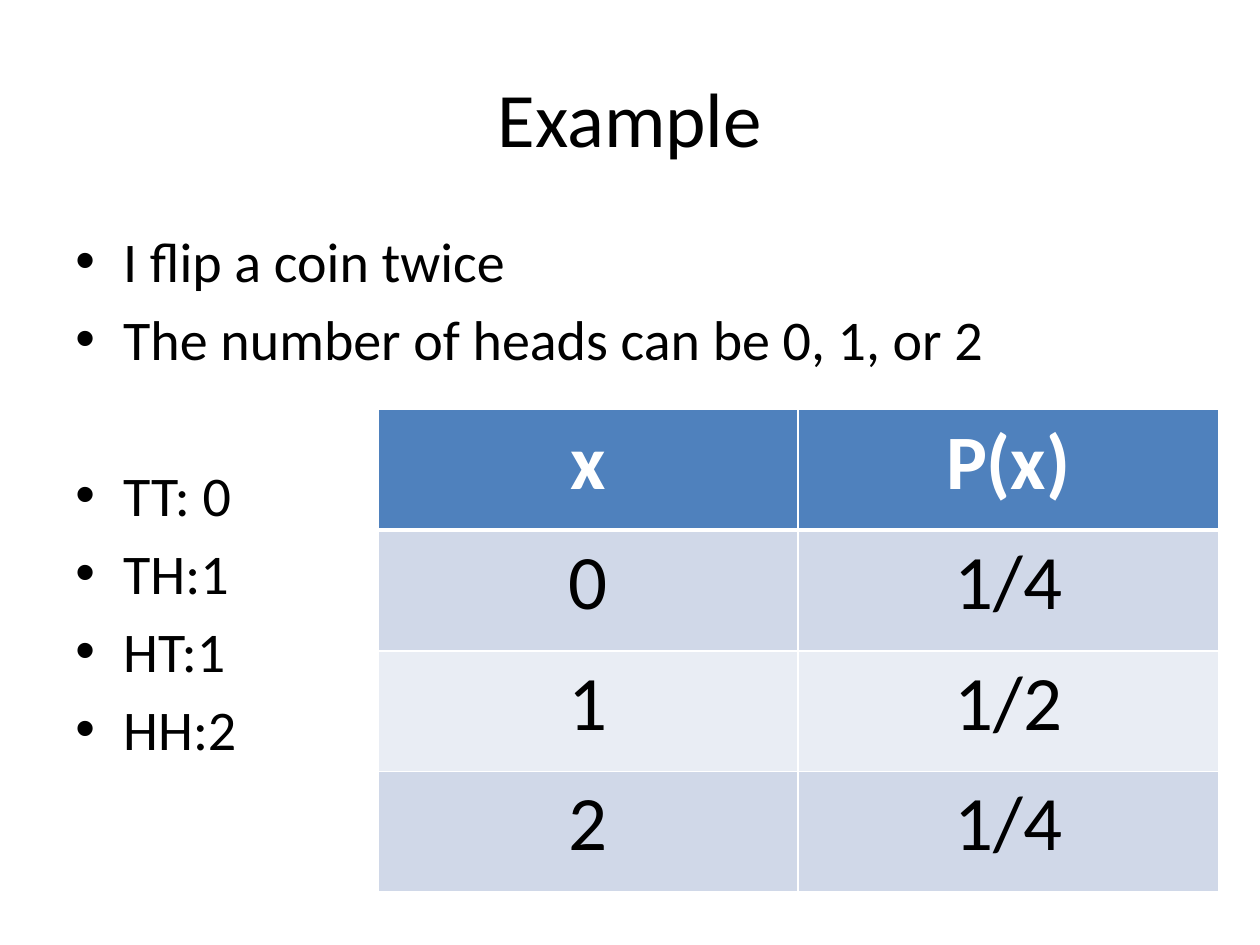
from lxml.etree import SubElement
from pptx import Presentation
from pptx.dml.color import RGBColor
from pptx.enum.text import MSO_ANCHOR, PP_ALIGN
from pptx.oxml.ns import qn
from pptx.util import Inches, Pt

BLACK, WHITE, BLUE = "000000", "FFFFFF", "4F81BD"
BANDS = ("D0D8E8", "E9EDF4")


def rgb(value):
    return RGBColor.from_string(value)


def write(paragraph, text, size=32, color=BLACK, bold=False,
          align=PP_ALIGN.LEFT, before=0, bullet=None):
    paragraph.alignment = align
    paragraph.space_before = Pt(before)
    run = paragraph.add_run()
    run.text = text
    font = run.font
    font.name, font.size, font.bold = "Calibri", Pt(size), bold
    font.color.rgb = rgb(color)
    if bullet:
        props = paragraph._p.get_or_add_pPr()
        indent = Inches(0.38)
        props.set("marL", str(indent))
        props.set("indent", str(-indent))
        SubElement(props, qn("a:buFont"), typeface="Arial")
        SubElement(props, qn("a:buChar"), char=bullet)


def set_borders(cell, bottom=1):
    """Draw white cell edges; must run before the cell is filled."""
    props = cell._tc.get_or_add_tcPr()
    for edge, width in (("lnL", 1), ("lnR", 1), ("lnT", 1), ("lnB", bottom)):
        line = SubElement(props, qn(f"a:{edge}"), w=str(Pt(width)))
        fill = SubElement(line, qn("a:solidFill"))
        SubElement(fill, qn("a:srgbClr"), val=WHITE)


class SlideBuilder:
    def __init__(self, slide):
        self.slide = slide
        background = slide.background.fill
        background.solid()
        background.fore_color.rgb = rgb(WHITE)

    def text_frame(self, left, top, width, height, anchor=MSO_ANCHOR.TOP):
        box = self.slide.shapes.add_textbox(
            Inches(left), Inches(top), Inches(width), Inches(height))
        frame = box.text_frame
        frame.word_wrap = True
        frame.vertical_anchor = anchor
        return frame

    def title(self, text):
        frame = self.text_frame(0.5, 0.3, 9, 1.25, MSO_ANCHOR.MIDDLE)
        write(frame.paragraphs[0], text, size=44, align=PP_ALIGN.CENTER)

    def bullets(self, groups):
        """Write groups of bullets, parted by one line of space."""
        frame = self.text_frame(0.5, 1.75, 9, 4.95)
        paragraph = frame.paragraphs[0]
        for group_index, group in enumerate(groups):
            for index, text in enumerate(group):
                if group_index or index:
                    paragraph = frame.add_paragraph()
                starts_group = group_index > 0 and index == 0
                write(paragraph, text, bullet="•",
                      before=51 if starts_group else 6)

    def table(self, rows, left, top, width, height):
        table = self.slide.shapes.add_table(
            len(rows), len(rows[0]), Inches(left), Inches(top),
            Inches(width), Inches(height)).table
        for row_index, row in enumerate(rows):
            header = row_index == 0
            fill = BLUE if header else BANDS[(row_index - 1) % 2]
            for column, text in enumerate(row):
                cell = table.cell(row_index, column)
                set_borders(cell, bottom=3 if header else 1)
                if row_index == 1:
                    cell._tc.tcPr.find(qn("a:lnT")).set("w", str(Pt(3)))
                cell.fill.solid()
                cell.fill.fore_color.rgb = rgb(fill)
                write(cell.text_frame.paragraphs[0], text, size=44,
                      color=WHITE if header else BLACK, bold=header,
                      align=PP_ALIGN.CENTER)


def main():
    deck = Presentation()
    deck.slide_width, deck.slide_height = Inches(10), Inches(7.5)
    builder = SlideBuilder(deck.slides.add_slide(deck.slide_layouts[6]))
    builder.title("Example")
    builder.bullets([
        ["I flip a coin twice", "The number of heads can be 0, 1, or 2"],
        ["TT: 0", "TH:1", "HT:1", "HH:2"],
    ])
    distribution = [("x", "P(x)"), ("0", "1/4"), ("1", "1/2"), ("2", "1/4")]
    builder.table(distribution, 3, 3.25, 6.67, 3.83)
    deck.save("out.pptx")


if __name__ == "__main__":
    main()
